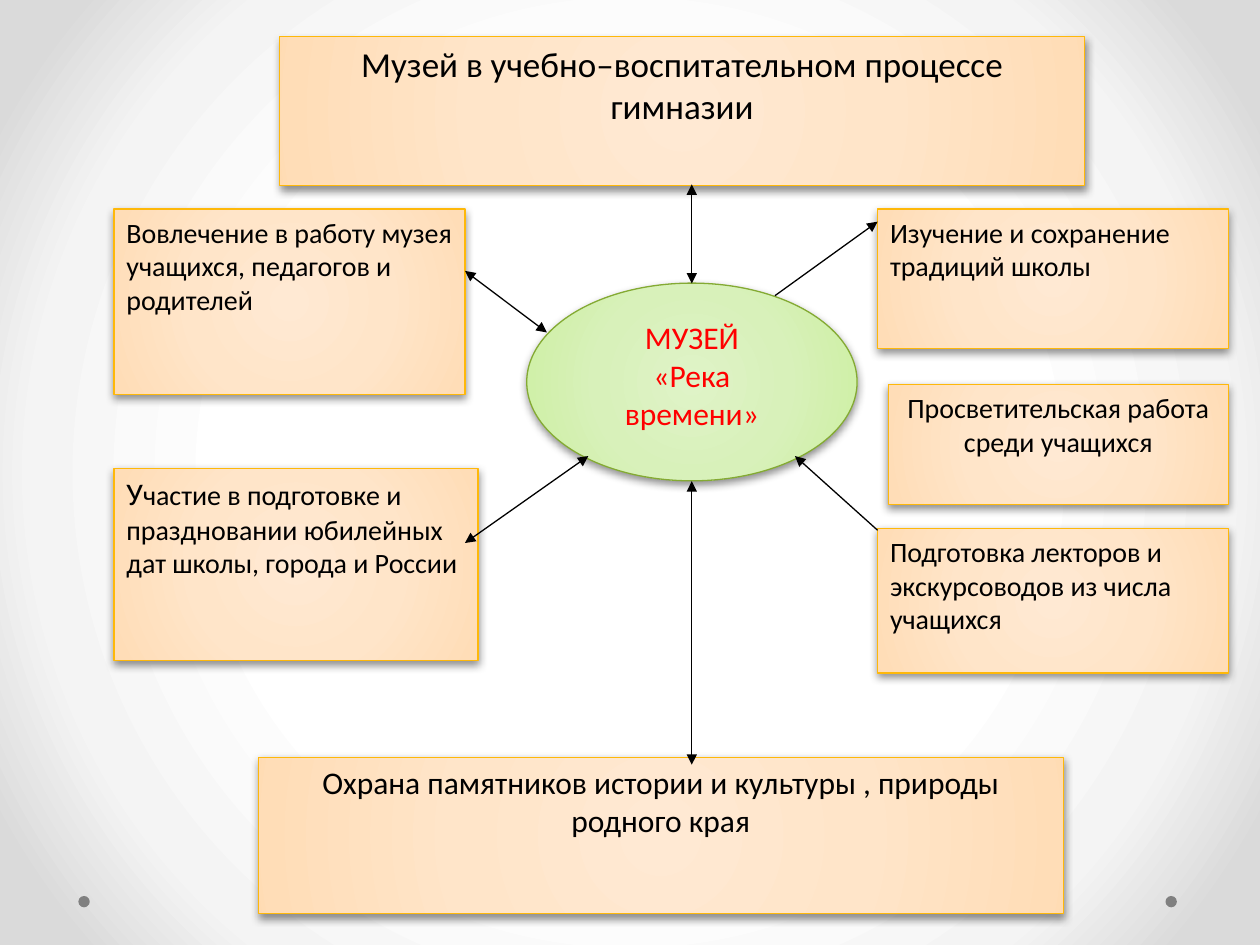
"""Build a slide showing how the school museum connects to its areas of work."""
import pptx
import pptx.dml.color
import pptx.enum.shapes
import pptx.enum.text
import pptx.oxml
import pptx.oxml.ns
import pptx.util

Pt = pptx.util.Pt
qn = pptx.oxml.ns.qn
SHAPE = pptx.enum.shapes.MSO_SHAPE
ALIGN = pptx.enum.text.PP_ALIGN
NS = pptx.oxml.ns.nsdecls("a")

COLORS = {
    "text": "000000",
    "accent": "FF0000",
    "box_line": "FEB80A",
    "museum_line": "84AA33",
    "dot": "808080",
    "shadow": "000000",
}
GRADIENTS = {
    "background": [(50, "FFFFFF"), (76, "F4F4F4"), (92, "DADADA")],
    "box": [(0, "FFE9D3"), (50, "FFE5C9"), (97, "FFDDB7"), (100, "FFDBB2")],
    "museum": [(0, "DFF3C7"), (50, "D8F1BA"), (97, "CDEFA2"), (100, "CAF199")],
}
BOXES = [
    ((159.84, 20.88, 460, 85), ALIGN.CENTER,
     [("Музей в учебно–воспитательном процессе гимназии", 20)]),
    ((147.6, 432.72, 460, 89.3), ALIGN.CENTER,
     [("Охрана памятников истории и культуры , природы родного края", 18)]),
    ((65.2, 119.5, 200.5, 106), ALIGN.LEFT,
     [("Вовлечение в работу музея учащихся, педагогов и родителей", 16)]),
    ((65.2, 267.6, 208, 110), ALIGN.LEFT,
     [("У", 18),
      ("частие в подготовке и праздновании юбилейных дат школы, города и России", 16)]),
    ((501.5, 302, 200.5, 82.6), ALIGN.LEFT,
     [("Подготовка лекторов и экскурсоводов из числа учащихся", 16)]),
    ((507.6, 219.6, 194.4, 68.8), ALIGN.CENTER,
     [("Просветительская работа среди учащихся", 16)]),
    ((501.5, 119.5, 200.5, 79.8), ALIGN.LEFT,
     [("Изучение и сохранение традиций школы", 16)]),
]
ARROWS = [
    ((265.7, 310.3), (336.2, 260.6), True),
    ((395.3, 275), (395.3, 437), True),
    ((501.5, 303), (454.3, 260.6), False),
    ((442.8, 169), (501.5, 126.7), False),
    ((312.5, 190), (265.7, 154.8), True),
    ((395.3, 162), (395.3, 105.4), True),
]


def rgb(name):
    """Return the named colour."""
    return pptx.dml.color.RGBColor.from_string(COLORS[name])


def fill_radial(fill, parent, name):
    """Give a fill the named gradient, spreading from the centre."""
    fill.solid()
    stops = "".join(
        f'<a:gs pos="{pos * 1000}"><a:srgbClr val="{color}"/></a:gs>'
        for pos, color in GRADIENTS[name])
    grad = pptx.oxml.parse_xml(
        f'<a:gradFill {NS} rotWithShape="1"><a:gsLst>{stops}</a:gsLst><a:path path="circle">'
        '<a:fillToRect l="50000" t="50000" r="50000" b="50000"/></a:path></a:gradFill>')
    parent.replace(parent.find(qn("a:solidFill")), grad)


def add_shadow(sp):
    """Add a soft shadow below a shape."""
    sp.shadow.inherit = False
    sp.element.spPr.find(qn("a:effectLst")).append(pptx.oxml.parse_xml(
        f'<a:outerShdw {NS} blurRad="{Pt(5)}" dist="{Pt(2)}" dir="5400000" rotWithShape="0">'
        f'<a:srgbClr val="{COLORS["shadow"]}"><a:alpha val="43000"/></a:srgbClr></a:outerShdw>'))


def add_node(s, kind, at, gradient, align, paragraphs, color="text"):
    """Add a gradient shape whose paragraphs are lists of (text, size) runs."""
    sp = s.shapes.add_shape(kind, *map(Pt, at))
    fill_radial(sp.fill, sp.element.spPr, gradient)
    sp.line.color.rgb = rgb(f"{gradient}_line")
    sp.line.width = Pt(0.75)
    add_shadow(sp)
    tf = sp.text_frame
    tf.word_wrap = True
    tf.vertical_anchor = pptx.enum.text.MSO_ANCHOR.TOP
    for i, runs in enumerate(paragraphs):
        p = tf.add_paragraph() if i else tf.paragraphs[0]
        p.alignment = align
        p.font.name = "Calibri"
        p.font.color.rgb = rgb(color)
        for text, size in runs:
            r = p.add_run()
            r.text = text
            r.font.size = Pt(size)


def add_arrow(s, start, end, both):
    """Add an arrow, pointing both ways if asked."""
    cxn = s.shapes.add_connector(
        pptx.enum.shapes.MSO_CONNECTOR.STRAIGHT, *map(Pt, start + end))
    cxn.line.color.rgb = rgb("text")
    cxn.line.width = Pt(0.75)
    ln = cxn.line._get_or_add_ln()
    for tag in ["headEnd", "tailEnd"] if both else ["tailEnd"]:
        ln.append(pptx.oxml.parse_xml(f'<a:{tag} {NS} type="triangle"/>'))
    cxn.element.spPr.append(pptx.oxml.parse_xml(f"<a:effectLst {NS}/>"))


def add_dot(s, left):
    """Add a small grey dot near the bottom edge."""
    sp = s.shapes.add_shape(SHAPE.OVAL, Pt(left), Pt(512), Pt(6.5), Pt(6.5))
    sp.shadow.inherit = False
    sp.fill.solid()
    sp.fill.fore_color.rgb = rgb("dot")
    sp.line.fill.background()


def main():
    """Build and save the slide."""
    prs = pptx.Presentation()
    prs.slide_width, prs.slide_height = Pt(720), Pt(540)
    s = prs.slides.add_slide(prs.slide_layouts[6])
    fill = s.background.fill
    fill.solid()
    fill_radial(fill, s.element.find(".//" + qn("p:bgPr")), "background")
    for left in (666, 44.8):
        add_dot(s, left)
    add_node(s, SHAPE.OVAL, (301, 161.8, 188.8, 113), "museum", ALIGN.CENTER,
             [[("МУЗЕЙ", 18)], [("«Река времени»", 18)]], "accent")
    for at, align, runs in BOXES:
        add_node(s, SHAPE.RECTANGLE, at, "box", align, [runs])
    for arrow in ARROWS:
        add_arrow(s, *arrow)
    prs.save("out.pptx")


if __name__ == "__main__":
    main()
